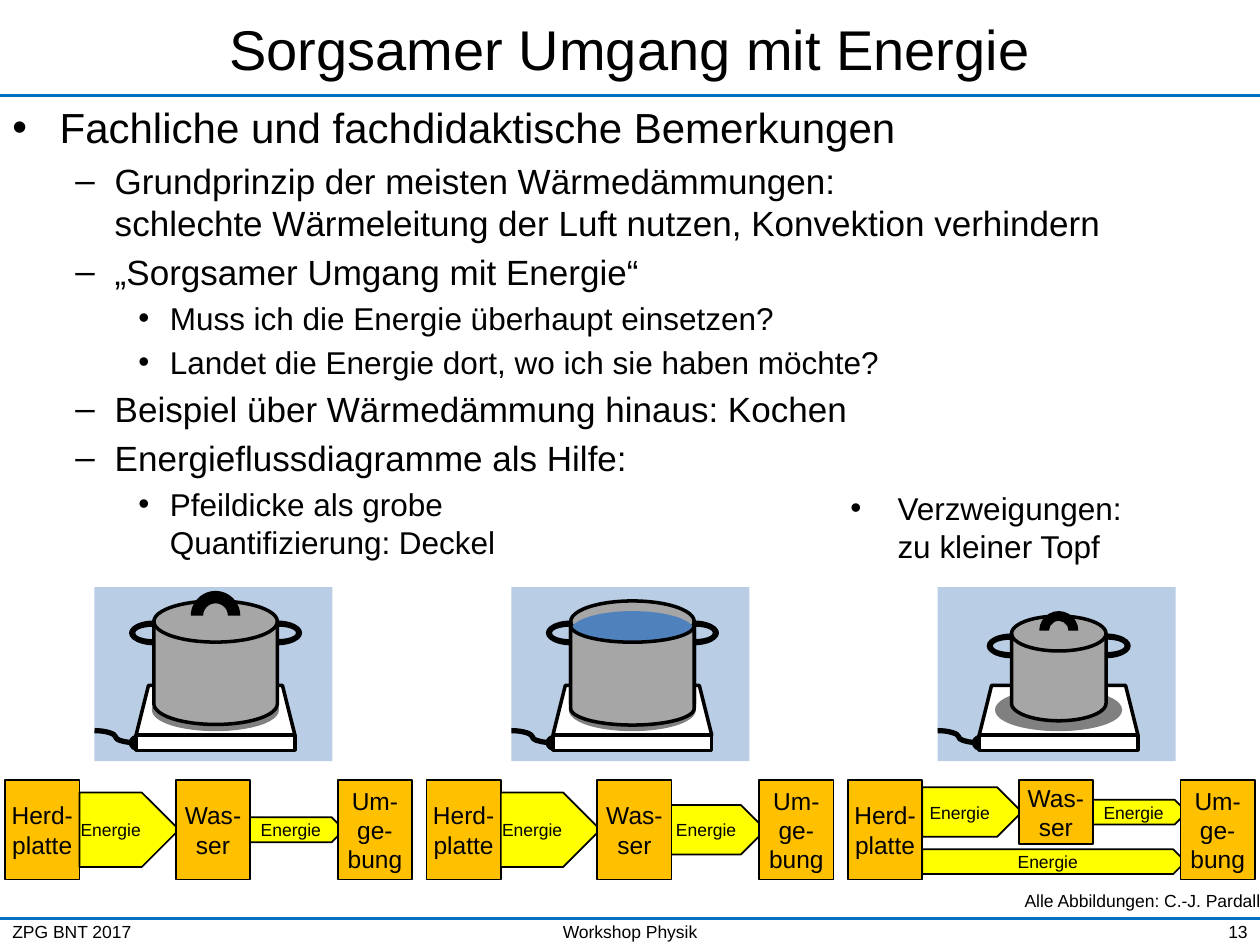
from lxml.etree import SubElement
from pptx import Presentation
from pptx.dml.color import RGBColor
from pptx.enum.shapes import MSO_CONNECTOR, MSO_SHAPE
from pptx.enum.text import MSO_ANCHOR, PP_ALIGN
from pptx.oxml.ns import qn
from pptx.util import Pt

FONT = "Arial"
BLACK, WHITE, BLUE = "000000", "FFFFFF", "0070C0"
TILE, SHADE, METAL, WATER = "B9CDE5", "808080", "A6A6A6", "4F81BD"
BOX_FILL, ARROW_FILL = "FFC000", "FFFF00"

# Font size, left margin, hanging indent and bullet of each outline level
LEVELS = [(24, 27, 27, "•"), (20, 58.5, 22.5, "–"), (18, 90, 18, "•")]
OUTLINE = [
    (0, "Fachliche und fachdidaktische Bemerkungen"),
    (1, "Grundprinzip der meisten Wärmedämmungen:\n"
        "schlechte Wärmeleitung der Luft nutzen, Konvektion verhindern"),
    (1, "„Sorgsamer Umgang mit Energie“"),
    (2, "Muss ich die Energie überhaupt einsetzen?"),
    (2, "Landet die Energie dort, wo ich sie haben möchte?"),
    (1, "Beispiel über Wärmedämmung hinaus: Kochen"),
    (1, "Energieflussdiagramme als Hilfe:"),
    (2, "Pfeildicke als grobe \nQuantifizierung: Deckel"),
]
SCENE_TOP = 335.5
FLOW_LEFT, FLOW_STEP, FLOW_TOP = 2.9, 240.8, 445.7
BOX_WIDTH, BOX_HEIGHT = 42.5, 56.9


def color(hex_string):
    return RGBColor.from_string(hex_string)


def style_paragraph(paragraph, size, align=PP_ALIGN.LEFT):
    paragraph.alignment = align
    paragraph.font.name = FONT
    paragraph.font.size = Pt(size)
    paragraph.font.color.rgb = color(BLACK)


def set_bullet(paragraph, margin, hanging, character, space_percent=0):
    properties = paragraph._p.get_or_add_pPr()
    properties.set("marL", str(Pt(margin)))
    properties.set("indent", str(-Pt(hanging)))
    if space_percent:
        before = SubElement(properties, qn("a:spcBef"))
        SubElement(before, qn("a:spcPct")).set("val", str(space_percent * 1000))
    SubElement(properties, qn("a:buFont")).set("typeface", FONT)
    SubElement(properties, qn("a:buChar")).set("char", character)


def set_insets(frame, inset):
    frame.margin_left = frame.margin_right = Pt(inset)
    frame.margin_top = frame.margin_bottom = Pt(inset)


def add_text_frame(slide, left, top, width, height, anchor=MSO_ANCHOR.TOP):
    box = slide.shapes.add_textbox(Pt(left), Pt(top), Pt(width), Pt(height))
    box.text_frame.word_wrap = True
    box.text_frame.vertical_anchor = anchor
    return box.text_frame


def add_label(slide, text, position, size, align, anchor=MSO_ANCHOR.MIDDLE):
    frame = add_text_frame(slide, *position, anchor)
    frame.paragraphs[0].text = text
    style_paragraph(frame.paragraphs[0], size, align)
    return frame


def add_outline(slide):
    frame = add_text_frame(slide, 0, 54.7, 720, 470.9)
    for index, (level, text) in enumerate(OUTLINE):
        paragraph = frame.add_paragraph() if index else frame.paragraphs[0]
        size, margin, hanging, character = LEVELS[level]
        paragraph.text = text
        paragraph.level = level
        set_bullet(paragraph, margin, hanging, character, 20)
        style_paragraph(paragraph, size)


def add_branch_note(slide):
    frame = add_text_frame(slide, 478.8, 275.8, 187.2, 51.1)
    paragraph = frame.paragraphs[0]
    paragraph.text = "Verzweigungen: zu kleiner Topf"
    set_bullet(paragraph, 27, 27, "•")
    style_paragraph(paragraph, 18)


def add_line(shapes, kind, start, end, line_color, width):
    line = shapes.add_connector(kind, *map(Pt, start + end))
    line.line.color.rgb = color(line_color)
    line.line.width = Pt(width)
    SubElement(line._element.spPr, qn("a:effectLst"))
    return line


def add_figure(shapes, kind, left, top, width, height, fill,
               line_color=None, line_width=2, rotation=0):
    shape = shapes.add_shape(kind, Pt(left), Pt(top), Pt(width), Pt(height))
    shape.shadow.inherit = False
    shape.fill.solid()
    shape.fill.fore_color.rgb = color(fill)
    if line_color:
        shape.line.color.rgb = color(line_color)
        shape.line.width = Pt(line_width)
    else:
        shape.line.fill.background()
    shape.rotation = rotation
    return shape


def add_stove(shapes, left):
    top = SCENE_TOP
    add_figure(shapes, MSO_SHAPE.RECTANGLE, left, top, 136, 99.4, TILE)
    cable = add_line(shapes, MSO_CONNECTOR.CURVE, (left, top + 82),
                     (left + 24, top + 89), BLACK, 3)
    SubElement(cable.line._get_or_add_ln(), qn("a:tailEnd")).set("type", "oval")
    add_figure(shapes, MSO_SHAPE.TRAPEZOID, left + 23.8, top + 56.2,
               90.7, 28.3, WHITE, BLACK)
    add_figure(shapes, MSO_SHAPE.OVAL, left + 33.8, top + 59,
               70.6, 22.3, SHADE, SHADE)
    add_figure(shapes, MSO_SHAPE.RECTANGLE, left + 23.8, top + 84.8,
               90.7, 8.5, WHITE, BLACK)


def add_pot(slide, left, pot_top, width, height, handle_top, lid_top=None, lid_size=0):
    """Draw a pot on its stove; without lid_top it is open and shows the water."""
    shapes = slide.shapes.add_group_shape().shapes
    add_stove(shapes, left)
    center = left + 69.2
    pot_left, pot_top = center - width / 2, SCENE_TOP + pot_top
    add_figure(shapes, MSO_SHAPE.FLOWCHART_MAGNETIC_DISK, pot_left, pot_top,
               width, height, METAL, BLACK)
    if lid_top is not None:
        add_figure(shapes, MSO_SHAPE.BLOCK_ARC, center - lid_size / 2,
                   SCENE_TOP + lid_top, lid_size, lid_size, BLACK)
    for edge, rotation in ((pot_left, 270), (pot_left + width, 90)):
        add_figure(shapes, MSO_SHAPE.BLOCK_ARC, edge - 7.1, SCENE_TOP + handle_top,
                   14.2, 28.3, BLACK, rotation=rotation)
    if lid_top is None:
        add_figure(shapes, MSO_SHAPE.OVAL, pot_left, pot_top + 5.8, width, 22.3, WATER)
        add_figure(shapes, MSO_SHAPE.FLOWCHART_STORED_DATA, center - 28.4,
                   pot_top + 7.2, 56.8, width, METAL, BLACK, rotation=270)


def add_flow_text(shape, text, size, inset):
    frame = shape.text_frame
    frame.word_wrap = True
    frame.vertical_anchor = MSO_ANCHOR.MIDDLE
    set_insets(frame, inset)
    frame.paragraphs[0].text = text
    style_paragraph(frame.paragraphs[0], size, PP_ALIGN.CENTER)


def add_flow_box(shapes, left, text, height=BOX_HEIGHT):
    box = add_figure(shapes, MSO_SHAPE.RECTANGLE, left, FLOW_TOP, BOX_WIDTH,
                     height, BOX_FILL, BLACK, 1)
    add_flow_text(box, text, 14, 2.8)


def add_flow_arrow(shapes, left, middle, width, thickness):
    arrow = add_figure(shapes, MSO_SHAPE.RIGHT_ARROW, left, middle - thickness / 2,
                       width, thickness, ARROW_FILL, BLACK, 1)
    arrow.adjustments[0] = 1
    arrow.adjustments[1] = 0.5
    add_flow_text(arrow, "Energie", 10, 0)


def add_flow(slide, column, supply, loss, water_height=BOX_HEIGHT, bypass=0):
    """Draw an energy flow; supply, loss and bypass are arrow thicknesses."""
    shapes = slide.shapes.add_group_shape().shapes
    left = FLOW_LEFT + column * FLOW_STEP
    middle = FLOW_TOP + water_height / 2
    if bypass:
        add_flow_arrow(shapes, left + BOX_WIDTH, 492.4, 150.5, bypass)
    add_flow_box(shapes, left, "Herd-platte")
    add_flow_arrow(shapes, left + BOX_WIDTH, middle, 56.9, supply)
    add_flow_arrow(shapes, left + 139.8, middle, 54, loss)
    add_flow_box(shapes, left + 190.1, "Um-ge-bung")
    add_flow_box(shapes, left + 97.6, "Was-ser", water_height)


def main():
    presentation = Presentation()
    presentation.slide_width, presentation.slide_height = Pt(720), Pt(540)
    slide = presentation.slides.add_slide(presentation.slide_layouts[6])

    for height in (54.7, 525):
        add_line(slide.shapes, MSO_CONNECTOR.STRAIGHT, (0, height), (720, height),
                 BLUE, 1.5)
    add_label(slide, "Sorgsamer Umgang mit Energie", (0, 0, 720, 54.7), 32,
              PP_ALIGN.CENTER)
    add_outline(slide)
    add_label(slide, "ZPG BNT 2017", (0, 525, 196, 15), 10, PP_ALIGN.LEFT)
    add_label(slide, "Workshop Physik", (246, 525, 228, 15), 10, PP_ALIGN.CENTER)
    add_label(slide, "13", (530, 525, 190, 15), 10, PP_ALIGN.RIGHT)
    add_branch_note(slide)

    add_pot(slide, 54, 7.9, 70.6, 70.6, 12, lid_top=2.2, lid_size=28.3)
    add_pot(slide, 292.2, 7.9, 70.6, 70.6, 12)
    add_pot(slide, 535.8, 16.6, 54, 59.8, 19.4, lid_top=13.7, lid_size=22.3)

    add_flow(slide, 0, supply=42.5, loss=14.2)
    add_flow(slide, 1, supply=42.5, loss=28.3)
    add_flow(slide, 2, supply=28.3, loss=14.2, water_height=36.7, bypass=14.2)

    credit = add_label(slide, "Alle Abbildungen: C.-J. Pardall", (527, 508.3, 193, 13),
                       10, PP_ALIGN.RIGHT, MSO_ANCHOR.TOP)
    set_insets(credit, 0)
    presentation.save("out.pptx")


if __name__ == "__main__":
    main()
